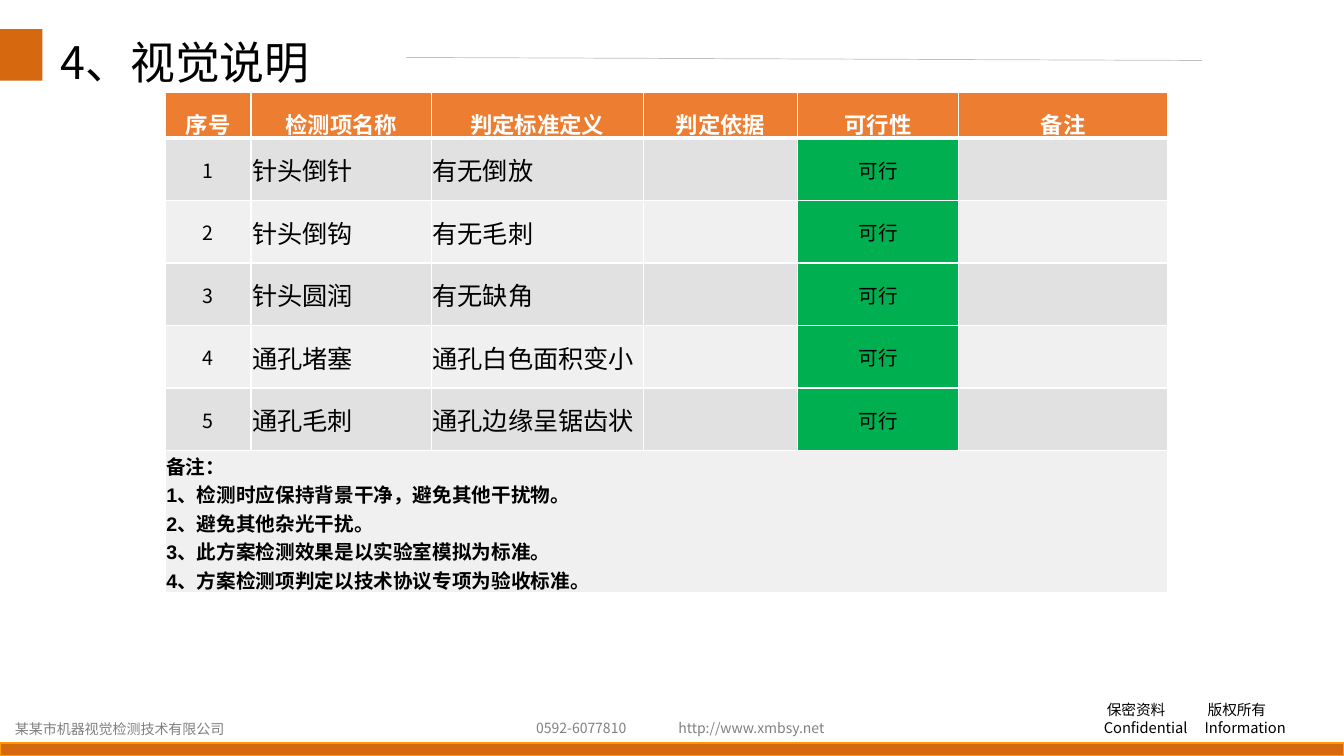
from dataclasses import dataclass
from typing import Optional

from lxml.etree import SubElement
from pptx import Presentation
from pptx.dml.color import RGBColor
from pptx.enum.shapes import MSO_CONNECTOR, MSO_SHAPE
from pptx.enum.text import MSO_ANCHOR, PP_ALIGN
from pptx.oxml.ns import qn
from pptx.util import Inches, Pt


@dataclass(frozen=True)
class Theme:
    font: str = "Noto Sans CJK SC"
    note_font: str = "Arial"
    black: str = "000000"
    white: str = "FFFFFF"
    gray: str = "808080"
    rule: str = "BFBFBF"
    accent: str = "D6680F"
    bar_edge: str = "FF9900"
    header: str = "ED7D31"
    bands: tuple = ("E1E1E1", "F0F0F0")
    feasible: str = "00B050"
    title_size: float = 32
    item_size: float = 18
    header_size: float = 16
    body_size: float = 14
    notice_size: float = 10.5
    footer_size: float = 10


@dataclass(frozen=True)
class FooterText:
    text: str
    left: float
    top: float
    width: float
    height: float = 0.27
    color: str = Theme.gray
    size: float = Theme.footer_size
    indent: float = 0
    tab: Optional[float] = None


@dataclass(frozen=True)
class Bar:
    left: float
    top: float
    width: float
    height: float
    edge: Optional[str] = None


@dataclass(frozen=True)
class Check:
    item: str
    standard: str


THEME = Theme()
BARS = [
    Bar(0, 7.37, 13.33, 0.13, THEME.bar_edge),
    Bar(0, 0.29, 0.42, 0.51),
]
FOOTERS = [
    FooterText("保密资料\t版权所有", 10.85, 6.9, 2.17, 0.23, THEME.black,
               THEME.notice_size, 0.03, 0.82),
    FooterText("Confidential\tInformation", 10.85, 7.08, 2.17, 0.27, THEME.black,
               THEME.notice_size, 0, 0.9),
    FooterText("http://www.xmbsy.net", 6.63, 7.09, 1.67),
    FooterText("0592-6077810", 5.22, 7.09, 1.1),
    FooterText("某某市机器视觉检测技术有限公司", 0.05, 7.1, 2.35),
]
HEADERS = ["序号", "检测项名称", "判定标准定义", "判定依据", "可行性", "备注"]
CHECKS = [
    Check("针头倒针", "有无倒放"),
    Check("针头倒钩", "有无毛刺"),
    Check("针头圆润", "有无缺角"),
    Check("通孔堵塞", "通孔白色面积变小"),
    Check("通孔毛刺", "通孔边缘呈锯齿状"),
]
NOTES = [
    "备注：",
    "1、检测时应保持背景干净，避免其他干扰物。",
    "2、避免其他杂光干扰。",
    "3、此方案检测效果是以实验室模拟为标准。",
    "4、方案检测项判定以技术协议专项为验收标准。",
]
COLUMN_WIDTHS = [0.85, 1.79, 2.1, 1.53, 1.6, 2.07]
ROW_HEIGHTS = [0.45] + [0.62] * len(CHECKS) + [1.41]


def write_text(frame, lines, *, size, color=THEME.black, font=THEME.font,
               bold=False, align=PP_ALIGN.LEFT, spacing=1.0, indent=0, tab=None) -> None:
    for index, line in enumerate(lines):
        para = frame.paragraphs[0] if index == 0 else frame.add_paragraph()
        para.alignment = align
        para.line_spacing = spacing
        para.space_before = Pt(0)
        properties = para._p.get_or_add_pPr()
        properties.set("marL", str(Inches(indent)))
        properties.set("indent", "0")
        if tab is not None:
            stops = SubElement(properties, qn("a:tabLst"))
            SubElement(stops, qn("a:tab"), pos=str(Inches(tab)), algn="l")
        span = para.add_run()
        span.text = line
        span.font.size = Pt(size)
        span.font.bold = bold
        span.font.name = font
        span.font.color.rgb = RGBColor.from_string(color)
        SubElement(span._r.get_or_add_rPr(), qn("a:ea"), typeface=THEME.font)


def draw_bar(slide, bar: Bar) -> None:
    shape = slide.shapes.add_shape(MSO_SHAPE.RECTANGLE, Inches(bar.left), Inches(bar.top),
                                   Inches(bar.width), Inches(bar.height))
    shape.shadow.inherit = False
    shape.fill.solid()
    shape.fill.fore_color.rgb = RGBColor.from_string(THEME.accent)
    if bar.edge:
        shape.line.color.rgb = RGBColor.from_string(bar.edge)
        shape.line.width = Pt(1)
    else:
        shape.line.fill.background()


def draw_footer(slide, footer: FooterText) -> None:
    box = slide.shapes.add_textbox(Inches(footer.left), Inches(footer.top),
                                   Inches(footer.width), Inches(footer.height))
    box.text_frame.word_wrap = True
    write_text(box.text_frame, [footer.text], size=footer.size, color=footer.color,
               indent=footer.indent, tab=footer.tab)


def draw_title(slide) -> None:
    title = slide.shapes.title
    title.left, title.top = Inches(0.5), Inches(0.29)
    title.width, title.height = Inches(3.98), Inches(0.71)
    title.text_frame.vertical_anchor = MSO_ANCHOR.MIDDLE
    write_text(title.text_frame, ["4、视觉说明"], size=THEME.title_size, spacing=0.9)
    rule = slide.shapes.add_connector(MSO_CONNECTOR.STRAIGHT, Inches(4.03), Inches(0.57),
                                      Inches(11.92), Inches(0.6))
    rule.line.color.rgb = RGBColor.from_string(THEME.rule)
    rule.line.width = Pt(0.5)
    SubElement(rule._element.spPr, qn("a:effectLst"))


def format_cell(cell, fill: str, bottom_width: float = 1) -> None:
    # Borders come before the fill in the cell properties
    properties = cell._tc.get_or_add_tcPr()
    for side, width in (("L", 1), ("R", 1), ("T", 1), ("B", bottom_width)):
        border = SubElement(properties, qn(f"a:ln{side}"), w=str(Pt(width)))
        SubElement(SubElement(border, qn("a:solidFill")), qn("a:srgbClr"), val=THEME.white)
    cell.fill.solid()
    cell.fill.fore_color.rgb = RGBColor.from_string(fill)


def tighten(cell) -> None:
    cell.vertical_anchor = MSO_ANCHOR.MIDDLE
    cell.margin_left = cell.margin_top = cell.margin_right = Inches(0.01)
    cell.margin_bottom = 0


def draw_table(slide) -> None:
    frame = slide.shapes.add_table(len(ROW_HEIGHTS), len(COLUMN_WIDTHS), Inches(1.64),
                                   Inches(0.92), Inches(sum(COLUMN_WIDTHS)),
                                   Inches(sum(ROW_HEIGHTS)))
    table = frame.table
    for column, width in zip(table.columns, COLUMN_WIDTHS):
        column.width = Inches(width)
    for row, height in zip(table.rows, ROW_HEIGHTS):
        row.height = Inches(height)

    # Header row
    for cell, label in zip(table.rows[0].cells, HEADERS):
        format_cell(cell, THEME.header, bottom_width=3)
        write_text(cell.text_frame, [label], size=THEME.header_size, color=THEME.white,
                   bold=True, align=PP_ALIGN.CENTER, spacing=1.3)

    # One row per inspection item
    for number, check in enumerate(CHECKS, start=1):
        values = [str(number), check.item, check.standard, "", "可行", ""]
        for column, value in enumerate(values):
            cell = table.cell(number, column)
            band = THEME.bands[(number - 1) % 2]
            format_cell(cell, THEME.feasible if column == 4 else band)
            if value:
                tighten(cell)
                is_item = column in (1, 2)
                write_text(cell.text_frame, [value],
                           size=THEME.item_size if is_item else THEME.body_size,
                           align=PP_ALIGN.LEFT if is_item else PP_ALIGN.CENTER)

    # Notes across the full width
    last = len(ROW_HEIGHTS) - 1
    notes = table.cell(last, 0)
    notes.merge(table.cell(last, len(COLUMN_WIDTHS) - 1))
    for cell in table.rows[last].cells:
        format_cell(cell, THEME.bands[1])
    tighten(notes)
    write_text(notes.text_frame, NOTES, size=THEME.body_size, font=THEME.note_font, bold=True)


def main() -> None:
    deck = Presentation()
    deck.slide_width, deck.slide_height = Inches(13.33), Inches(7.5)
    page = deck.slides.add_slide(deck.slide_layouts[5])
    for bar in BARS:
        draw_bar(page, bar)
    for footer in FOOTERS:
        draw_footer(page, footer)
    draw_title(page)
    draw_table(page)
    deck.save("out.pptx")


if __name__ == "__main__":
    main()
